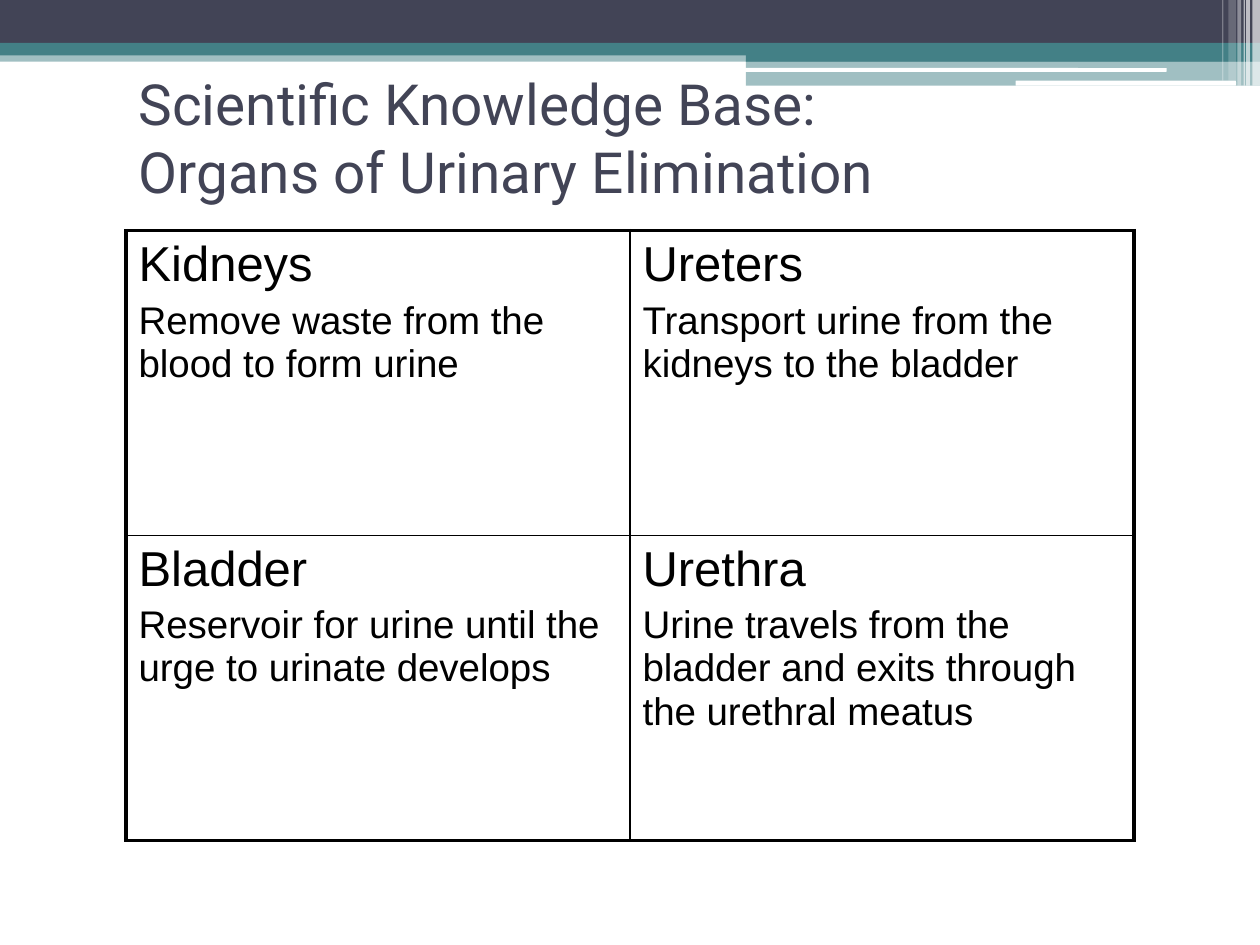
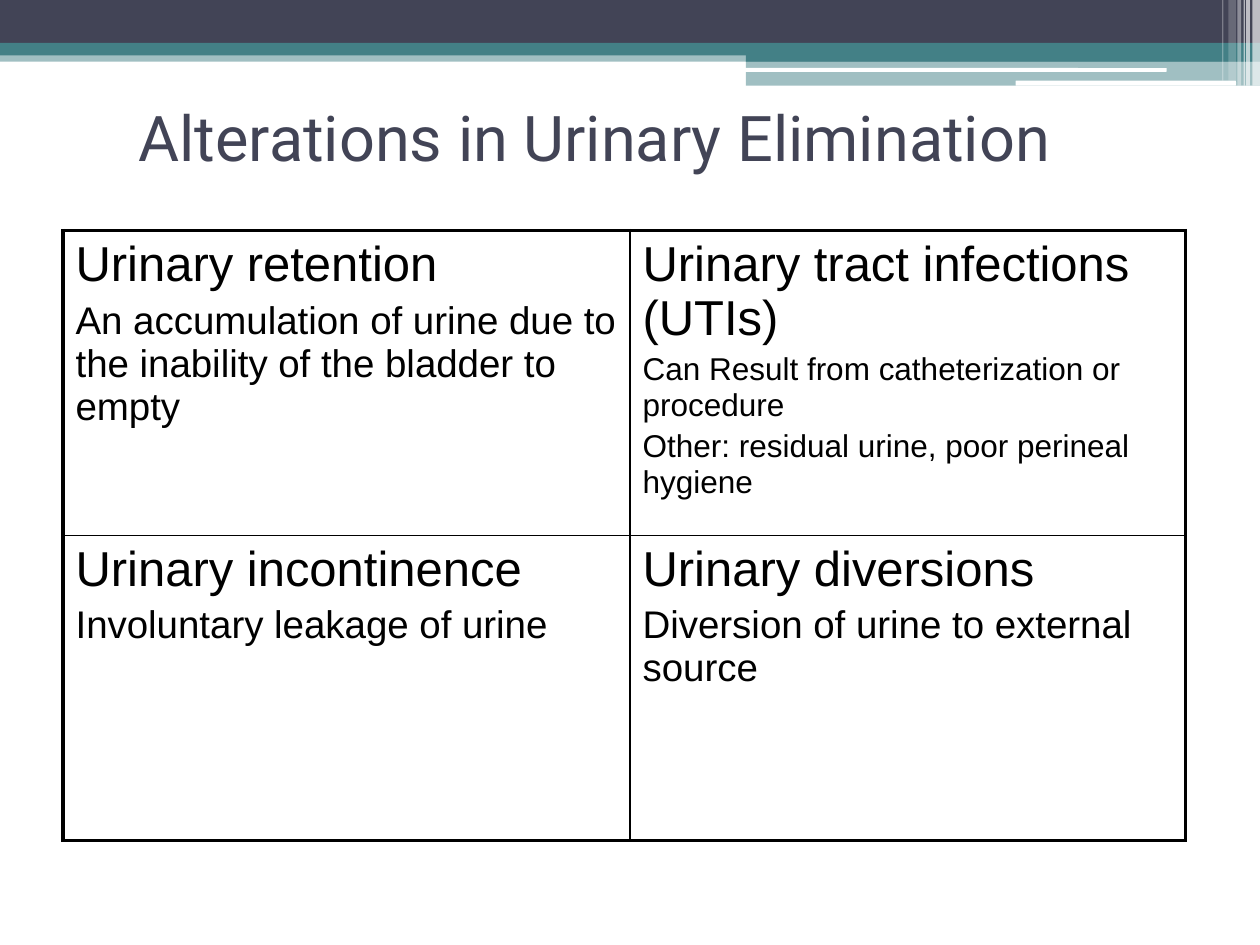
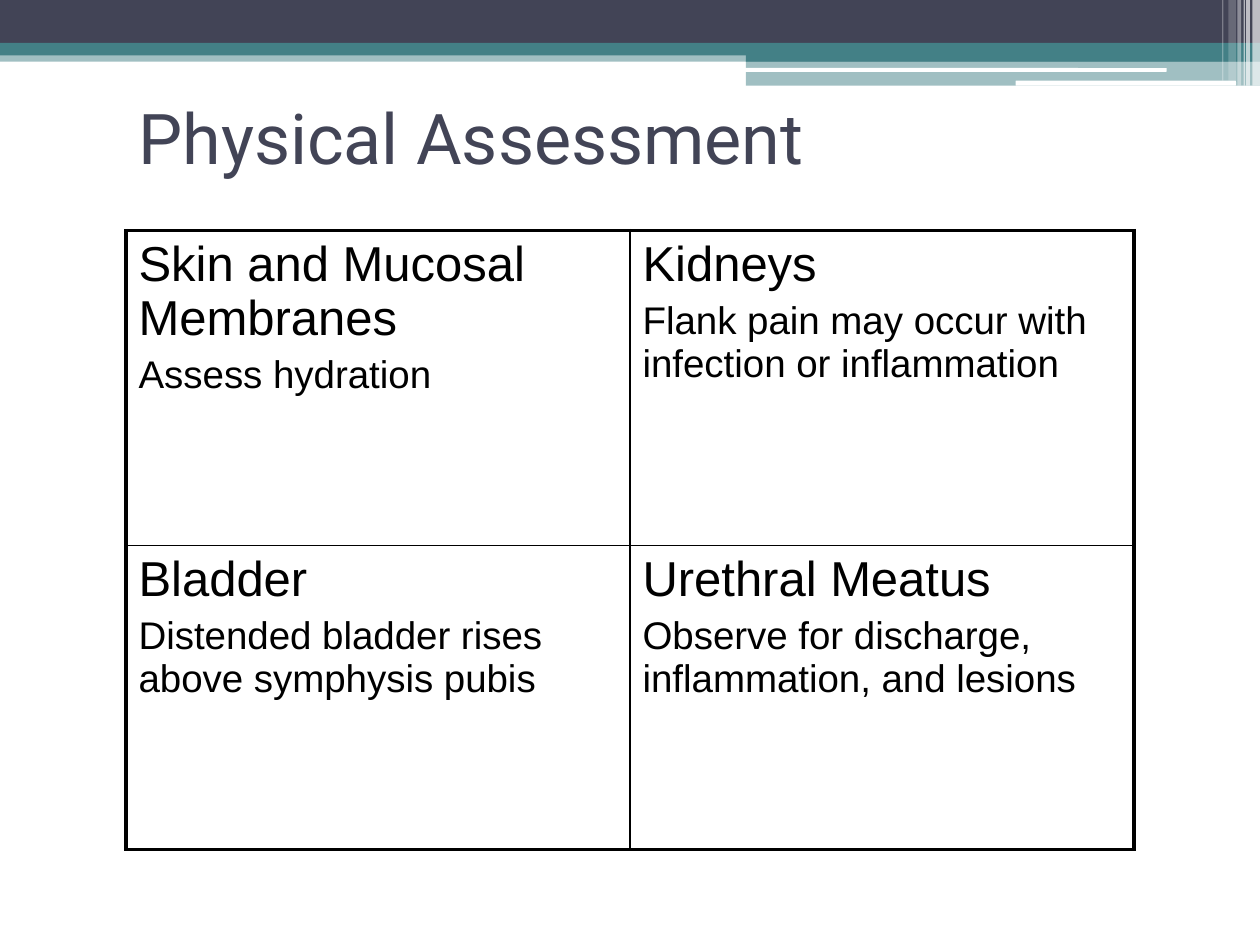
import pptx
import pptx.util
import pptx.dml.color
import pptx.enum.shapes
import pptx.enum.text
import pptx.oxml
import pptx.oxml.ns

SCALE = 9144
INK, TEAL, WHITE, BLACK = "424456", "438086", "FFFFFF", "000000"
RECT = pptx.enum.shapes.MSO_SHAPE.RECTANGLE
ROUND = pptx.enum.shapes.MSO_SHAPE.ROUNDED_RECTANGLE
THICK, THIN = 2.25, 1
HEAD, BODY, SMALL = 28, 22, 18

BANDS = [
    (RECT, (0, 40, 1000, 9), TEAL, 50),
    (RECT, (0, 0, 1000, 34), INK, 100),
    (RECT, (0, 34, 1000, 10), TEAL, 100),
    (RECT, (592, 39, 408, 10), TEAL, 100),
    (RECT, (592, 48, 408, 20), TEAL, 50),
    (ROUND, (591, 54, 335, 3), WHITE, 100),
    (ROUND, (806, 64, 175, 4), WHITE, 100),
    (RECT, (994, 0, 6, 68), WHITE, 65),
    (RECT, (989, 0, 3, 68), WHITE, 65),
    (RECT, (987, 0, 1, 68), WHITE, 60),
    (RECT, (982, 0, 3, 68), WHITE, 40),
    (RECT, (975, 0, 6, 64), WHITE, 20),
    (RECT, (970, 0, 1, 64), WHITE, 30),
]

PAGES = [
    {
        "title": "Scientific Knowledge Base:\nOrgans of Urinary Elimination",
        "size": 32.4, "left": 100, "cols": (400, 400), "rows": (242, 242),
        "cells": [
            [("Kidneys", BODY, "Remove waste from the blood to form urine"),
             ("Ureters", BODY, "Transport urine from the kidneys to the bladder")],
            [("Bladder", BODY, "Reservoir for urine until the urge to urinate develops"),
             ("Urethra", BODY,
              "Urine travels from the bladder and exits through the urethral meatus")],
        ],
    },
    {
        "title": "Alterations in Urinary Elimination",
        "size": 36, "left": 50, "cols": (450, 441), "rows": (242, 242),
        "cells": [
            [("Urinary retention", BODY,
              "An accumulation of urine due to the inability of the bladder to empty"),
             ("Urinary tract infections (UTIs)", SMALL,
              "Can Result from catheterization or procedure",
              "Other: residual urine, poor perineal hygiene")],
            [("Urinary incontinence", BODY, "Involuntary leakage of urine"),
             ("Urinary diversions", BODY, "Diversion of urine to external source")],
        ],
    },
    {
        "title": "Physical Assessment",
        "size": 40, "left": 100, "cols": (400, 400), "rows": (250, 241),
        "cells": [
            [("Skin and Mucosal Membranes", BODY, "Assess hydration"),
             ("Kidneys", BODY, "Flank pain may occur with infection or inflammation")],
            [("Bladder", BODY, "Distended bladder rises above symphysis pubis"),
             ("Urethral Meatus", BODY, "Observe for discharge, inflammation, and lesions")],
        ],
    },
]


def px(num):
    return pptx.util.Emu(num * SCALE)


def tint(code):
    return pptx.dml.color.RGBColor.from_string(code)


def put(item, vals):
    for key, val in vals.items():
        setattr(item, key, val)


def place(item, box):
    put(item, dict(zip(("left", "top", "width", "height"), map(px, box))))


class Deck:
    def __init__(self):
        self.file = pptx.Presentation()
        put(self.file, {"slide_width": px(1000), "slide_height": px(750)})
        self.base = self.file.slide_layouts.get_by_name("Title Only")
        for holder in list(self.base.placeholders):
            if holder.placeholder_format.idx:
                holder.element.getparent().remove(holder.element)
        self.slide = None

    def page(self):
        self.slide = self.file.slides.add_slide(self.base)

    def font(self, item, name, size, code):
        put(item, {"name": name, "size": pptx.util.Pt(size), "bold": False})
        item.color.rgb = tint(code)

    def band(self, kind, box, code, alpha):
        shape = self.slide.shapes.add_shape(kind, *map(px, box))
        shape.shadow.inherit = False
        shape.line.fill.background()
        shape.fill.solid()
        shape.fill.fore_color.rgb = tint(code)
        if alpha < 100:
            color = shape.element.spPr.find(".//" + pptx.oxml.ns.qn("a:srgbClr"))
            node = pptx.oxml.parse_xml(
                f'<a:alpha {pptx.oxml.ns.nsdecls("a")} val="{alpha * 1000}"/>')
            color.append(node)
        return shape

    def share(self, bands):
        for shape in [self.band(*band) for band in bands]:
            self.base.shapes.element.append(shape.element)

    def title(self, text, size):
        shape = self.slide.shapes.title
        place(shape, (100, 50, 800, 117))
        put(shape.text_frame, {
            "word_wrap": True,
            "auto_size": pptx.enum.text.MSO_AUTO_SIZE.NONE,
            "vertical_anchor": pptx.enum.text.MSO_ANCHOR.MIDDLE,
        })
        para = shape.text_frame.paragraphs[0]
        put(para, {"text": text, "alignment": pptx.enum.text.PP_ALIGN.LEFT})
        for run in para.runs:
            self.font(run.font, "Roboto", size, INK)

    def edge(self, cell, side, width):
        node = pptx.oxml.parse_xml(
            f'<a:ln{side} {pptx.oxml.ns.nsdecls("a")} w="{pptx.util.Pt(width)}">'
            f'<a:solidFill><a:srgbClr val="{BLACK}"/></a:solidFill></a:ln{side}>')
        cell._tc.get_or_add_tcPr().append(node)

    def cell(self, cell, head, size, *lines):
        frame = cell.text_frame
        for at, line in enumerate((head, *lines)):
            para = frame.add_paragraph() if at else frame.paragraphs[0]
            points = size if at else HEAD
            put(para, {"text": line, "space_before": pptx.util.Pt(points * 0.2)})
            self.font(para.runs[0].font, "Arial", points, BLACK)

    def grid(self, left, cols, rows, cells):
        box = (left, 183, sum(cols), sum(rows))
        table = self.slide.shapes.add_table(len(rows), len(cols), *map(px, box)).table
        put(table, {"first_row": False, "horz_banding": False})
        for col, width in zip(table.columns, cols):
            col.width = px(width)
        for row, height in zip(table.rows, rows):
            row.height = px(height)
        for y, line in enumerate(cells):
            for x, words in enumerate(line):
                cell = table.cell(y, x)
                outer = {"L": x == 0, "R": x == len(cols) - 1,
                         "T": y == 0, "B": y == len(rows) - 1}
                for side, rim in outer.items():
                    self.edge(cell, side, THICK if rim else THIN)
                cell.fill.background()
                self.cell(cell, *words)


def main():
    deck = Deck()
    for at, page in enumerate(PAGES):
        deck.page()
        if at == 0:
            deck.share(BANDS)
        deck.title(page["title"], page["size"])
        deck.grid(page["left"], page["cols"], page["rows"], page["cells"])
    deck.file.save("out.pptx")


if __name__ == "__main__":
    main()
